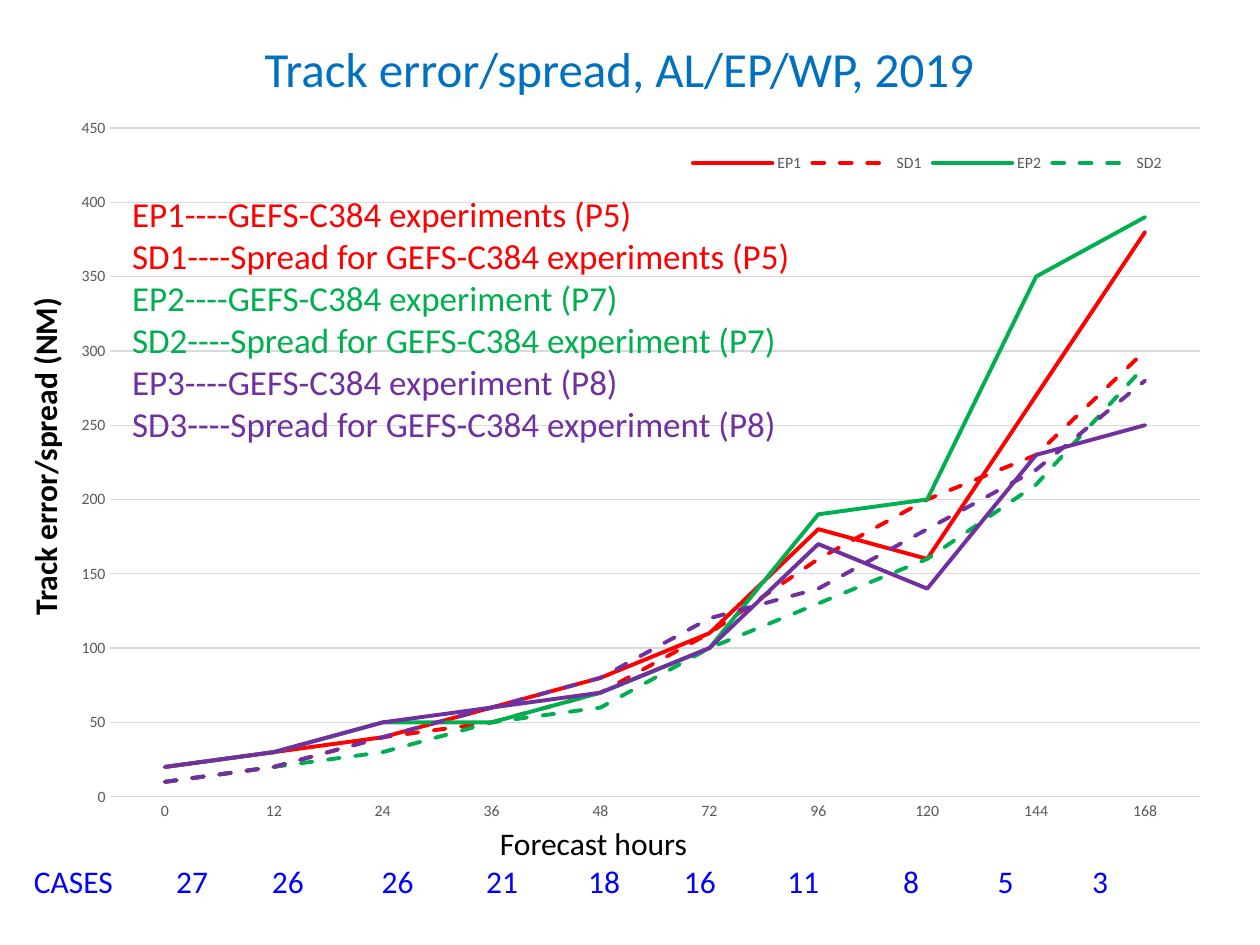
from lxml.etree import SubElement
from pptx import Presentation
from pptx.chart.data import CategoryChartData
from pptx.dml.color import RGBColor
from pptx.enum.chart import XL_CHART_TYPE as ChartType, XL_LEGEND_POSITION as LegendPos, XL_TICK_MARK as Tick
from pptx.enum.dml import MSO_LINE as Dash
from pptx.enum.text import MSO_ANCHOR as Anchor, MSO_AUTO_SIZE as AutoSize, PP_ALIGN as Align
from pptx.oxml import parse_xml
from pptx.oxml.ns import nsdecls, qn
from pptx.util import Inches, Pt

FONT = "Calibri"
RED, GREEN, PURPLE = "FF0000", "00B050", "7030A0"
GRAY, GRID = "595959", "D9D9D9"
HOURS = ["0", "12", "24", "36", "48", "72", "96", "120", "144", "168"]
TRACKS = [
    ("EP1", RED, [20, 30, 40, 60, 80, 110, 180, 160, 270, 380]),
    ("SD1", RED, [10, 20, 40, 50, 70, 110, 160, 200, 230, 300]),
    ("EP2", GREEN, [20, 30, 50, 50, 70, 100, 190, 200, 350, 390]),
    ("SD2", GREEN, [10, 20, 30, 50, 60, 100, 130, 160, 210, 290]),
    ("EP3", PURPLE, [20, 30, 50, 60, 70, 100, 170, 140, 230, 250]),
    ("SD3", PURPLE, [10, 20, 40, 60, 80, 120, 140, 180, 220, 280]),
]
EXPERIMENTS = [
    ("EP1----GEFS-C384 experiments (P5)", RED),
    ("SD1----Spread for GEFS-C384 experiments (P5)", RED),
    ("EP2----GEFS-C384 experiment (P7)", GREEN),
    ("SD2----Spread for GEFS-C384 experiment (P7)", GREEN),
    ("EP3----GEFS-C384 experiment (P8)", PURPLE),
    ("SD3----Spread for GEFS-C384 experiment (P8)", PURPLE),
]
CASES = ["CASES", "27", "26", "26", "21", "18", "16", "11", "8", "5", "3"]
CASE_STOPS = [1.13, 1.89, 2.76, 3.59, 4.4, 5.16, 5.98, 6.9, 7.65, 8.4]


def rgb(value):
    """Return a colour from its hex string."""
    return RGBColor.from_string(value)


def style_font(font, size, color, bold=False):
    """Apply the slide's typeface with a size and colour."""
    font.name, font.size, font.bold = FONT, Pt(size), bold
    font.color.rgb = rgb(color)


def add_text(slide, box, lines, size, align=Align.LEFT, bold=False, wrap=True):
    """Add a text box with one paragraph per (text, colour) line."""
    label = slide.shapes.add_textbox(*map(Inches, box))
    frame = label.text_frame
    frame.word_wrap = wrap
    for index, (text, color) in enumerate(lines):
        paragraph = frame.add_paragraph() if index else frame.paragraphs[0]
        paragraph.text = text
        paragraph.alignment = align
        style_font(paragraph.font, size, color, bold)
    return label


def set_tab_stops(paragraph, stops):
    """Give a paragraph left tab stops, in inches."""
    tabs = parse_xml(f"<a:tabLst {nsdecls('a')}/>")
    for stop in stops:
        SubElement(tabs, qn("a:tab"), pos=str(Inches(stop)), algn="l")
    paragraph._p.get_or_add_pPr().insert(0, tabs)


def manual_layout(x, y, w, h, inner=False):
    """Build a chart layout from fractions of the chart area."""
    target = '<c:layoutTarget val="inner"/>' if inner else ""
    sizes = "".join(f'<c:{name} val="{value}"/>' for name, value in zip("xywh", (x, y, w, h)))
    return parse_xml(
        f"<c:layout {nsdecls('c')}><c:manualLayout>{target}"
        f'<c:xMode val="edge"/><c:yMode val="edge"/>{sizes}</c:manualLayout></c:layout>')


def place_part(part, layout, index):
    """Replace the layout of a chart part."""
    for old in part.findall(qn("c:layout")):
        part.remove(old)
    part.insert(index, layout)


def add_title(slide, text):
    """Move and format the title placeholder."""
    title = slide.shapes.title
    title.left, title.top, title.width, title.height = map(Inches, (2, 0.25, 5.99, 0.57))
    frame = title.text_frame
    frame.text = text
    frame.word_wrap = True
    frame.auto_size = AutoSize.NONE
    frame.vertical_anchor = Anchor.MIDDLE
    frame.paragraphs[0].alignment = Align.LEFT
    style_font(frame.paragraphs[0].font, 28, "0070C0")


def format_axes(chart):
    """Style both axes and the horizontal grid."""
    hours, error = chart.category_axis, chart.value_axis
    for axis in (hours, error):
        axis.major_tick_mark = axis.minor_tick_mark = Tick.NONE
        style_font(axis.tick_labels.font, 9, GRAY)
    error.minimum_scale, error.maximum_scale, error.major_unit = 0, 450, 50
    error.format.line.fill.background()
    for line in (hours.format.line, error.major_gridlines.format.line):
        line.color.rgb = rgb(GRID)
        line.width = Pt(0.75)


def format_legend(chart, hidden):
    """Place the legend and drop the hidden entries."""
    chart.has_legend = True
    legend = chart.legend
    legend.position = LegendPos.BOTTOM
    legend.include_in_layout = False
    style_font(legend.font, 9, GRAY)
    element = legend._element
    for order, index in enumerate(hidden, 1):
        element.insert(order, parse_xml(
            f"<c:legendEntry {nsdecls('c')}><c:idx val=\"{index}\"/>"
            '<c:delete val="1"/></c:legendEntry>'))
    place_part(element, manual_layout(0.54, 0.05, 0.42, 0.05), len(hidden) + 1)


def add_track_chart(slide):
    """Add the error and spread line chart."""
    data = CategoryChartData()
    data.categories = HOURS
    for name, _, values in TRACKS:
        data.add_series(name, values)
    box = map(Inches, (0.55, 0.86, 9.08, 5.77))
    chart = slide.shapes.add_chart(ChartType.LINE, *box, data).chart
    chart.has_title = False
    style_font(chart.font, 10, "000000")
    plot = chart.plots[0]
    plot.vary_by_categories = False
    for series, (name, color, _) in zip(plot.series, TRACKS):
        series.smooth = False
        line = series.format.line
        line.color.rgb = rgb(color)
        line.width = Pt(2.25)
        if name.startswith("SD"):
            line.dash_style = Dash.DASH
        line._ln.set("cap", "rnd")
    format_axes(chart)
    format_legend(chart, hidden=(4, 5))
    plot_area = chart._chartSpace.chart.plotArea
    place_part(plot_area, manual_layout(0.036, 0.027, 0.952, 0.92, inner=True), 0)


def main():
    """Build the slide and save it."""
    deck = Presentation()
    deck.slide_width, deck.slide_height = Inches(10), Inches(7.5)
    slide = deck.slides.add_slide(deck.slide_layouts[5])
    add_title(slide, "Track error/spread, AL/EP/WP, 2019")
    axis_label = add_text(slide, (-1.01, 3.42, 2.74, 0.41),
                          [("Track error/spread (NM)", "000000")], 18,
                          Align.CENTER, bold=True, wrap=False)
    axis_label.rotation = 270
    footer = add_text(slide, (0.17, 6.49, 9.08, 1.01),
                      [("Forecast hours", "000000"), ("\t".join(CASES), "0000FF")], 18)
    hours_line, cases_line = footer.text_frame.paragraphs
    hours_line.alignment = Align.CENTER
    set_tab_stops(cases_line, CASE_STOPS)
    add_track_chart(slide)
    add_text(slide, (0.95, 1.48, 5.83, 2.14), EXPERIMENTS, 20)
    deck.save("out.pptx")


if __name__ == "__main__":
    main()
